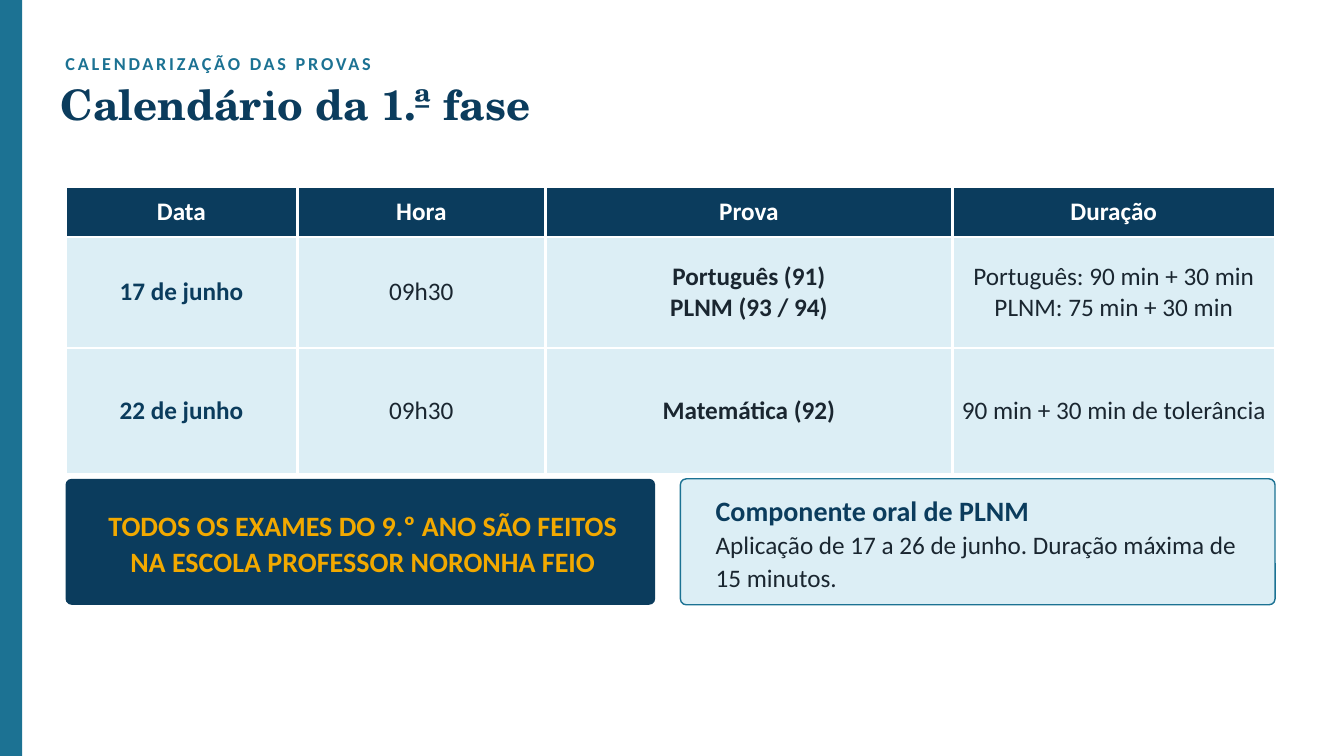
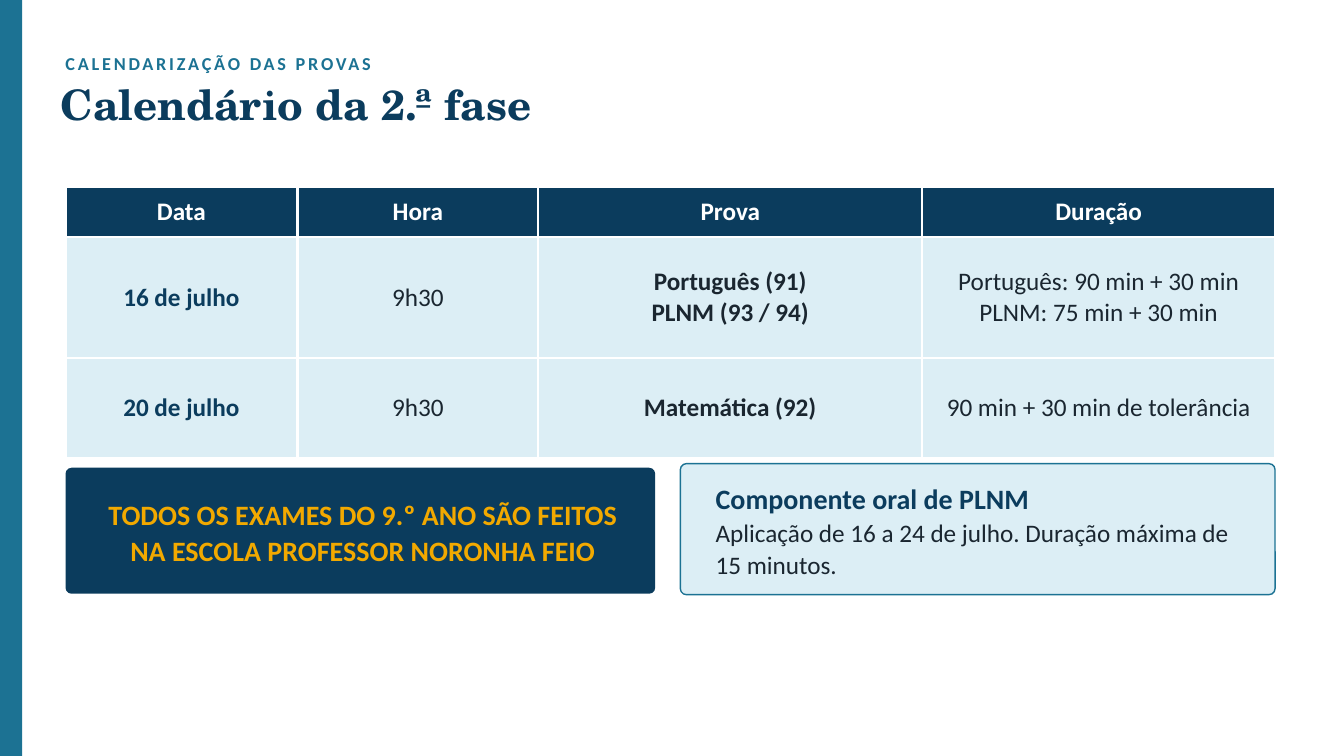
from lxml import etree
from pptx import Presentation
from pptx.dml.color import RGBColor
from pptx.enum import shapes, text
from pptx.oxml.ns import qn
from pptx.util import Pt

NAVY, TEAL, PALE = "0B3C5D", "1C7293", "DCEEF5"
INK, GOLD, WHITE = "1A2630", "F2A900", "FFFFFF"
BODY, SERIF = "Calibri", "TeX Gyre Schola"
LEFT, TABLE_TOP, CORNER = 46.8, 133.2, 4.32
CENTER = text.PP_ALIGN.CENTER
MIDDLE, TOP = text.MSO_ANCHOR.MIDDLE, text.MSO_ANCHOR.TOP

HEADERS = ["Data", "Hora", "Prova", "Duração"]
EXAMS = ["Português (91)\nPLNM (93 / 94)", "Matemática (92)"]
DURATIONS = ["Português: 90 min + 30 min\nPLNM: 75 min + 30 min",
             "90 min + 30 min de tolerância"]
VENUE = "TODOS OS EXAMES DO 9.º ANO SÃO FEITOS NA ESCOLA PROFESSOR NORONHA FEIO"

# Each box is (top, height)
PHASES = [
    {"name": "1.ª", "dates": ["17 de junho", "22 de junho"], "hour": "09h30",
     "oral": "17 a 26 de junho", "columns": [165.6, 177.12, 290.88, 230.4],
     "rows": [36, 79.2, 90], "venue_box": (342, 90), "oral_box": (342, 90)},
    {"name": "2.ª", "dates": ["16 de julho", "20 de julho"], "hour": "9h30",
     "oral": "16 a 24 de julho", "columns": [165.6, 172.08, 274.32, 252],
     "rows": [36, 86.4, 72], "venue_box": (334.08, 90), "oral_box": (331.2, 93.6)},
]


def color(value):
    return RGBColor.from_string(value)


def write(frame, lines, anchor=MIDDLE, align=None, spacing=None, margin=0):
    """Fill a text frame; each line is (text, size, colour, bold, font)."""
    frame.word_wrap = True
    frame.vertical_anchor = anchor
    frame.margin_left = frame.margin_right = Pt(margin)
    frame.margin_top = frame.margin_bottom = Pt(margin)
    for index, (words, size, ink, bold, font) in enumerate(lines):
        paragraph = frame.add_paragraph() if index else frame.paragraphs[0]
        paragraph.alignment = align
        paragraph.line_spacing = spacing
        run = paragraph.add_run()
        run.text = words
        run.font.size, run.font.bold, run.font.name = Pt(size), bold, font
        run.font.color.rgb = color(ink)


presentation = Presentation()
presentation.slide_width, presentation.slide_height = Pt(960), Pt(540)

for phase in PHASES:
    slide = presentation.slides.add_slide(presentation.slide_layouts[6])

    # Side band
    band = slide.shapes.add_shape(shapes.MSO_SHAPE.RECTANGLE, 0, 0, Pt(15.84), Pt(540))
    band.shadow.inherit = False
    band.fill.solid()
    band.fill.fore_color.rgb = color(TEAL)
    band.line.fill.background()

    # Section label and title
    label = slide.shapes.add_textbox(Pt(LEFT), Pt(32.4), Pt(792), Pt(25.2))
    write(label.text_frame, [("CALENDARIZAÇÃO DAS PROVAS", 13, TEAL, True, BODY)])
    label.text_frame.paragraphs[0].runs[0].font._element.set("spc", "200")
    title = slide.shapes.add_textbox(Pt(43.2), Pt(56.16), Pt(871.2), Pt(68.4))
    write(title.text_frame,
          [(f"Calendário da {phase['name']} fase", 30, NAVY, True, SERIF)], TOP)

    # Exam table
    rows = [HEADERS] + [[date, phase["hour"], exam, duration] for date, exam, duration
                        in zip(phase["dates"], EXAMS, DURATIONS)]
    table = slide.shapes.add_table(
        len(rows), len(HEADERS), Pt(LEFT), Pt(TABLE_TOP),
        Pt(sum(phase["columns"])), Pt(sum(phase["rows"]))).table
    table.horz_banding = False
    for column, width in zip(table.columns, phase["columns"]):
        column.width = Pt(width)
    for row, height in zip(table.rows, phase["rows"]):
        row.height = Pt(height)
    for r, values in enumerate(rows):
        for c, value in enumerate(values):
            cell = table.cell(r, c)
            header = r == 0
            ink = WHITE if header else NAVY if c == 0 else INK
            bold = header or c in (0, 2)
            write(cell.text_frame,
                  [(line, 18, ink, bold, BODY) for line in value.split("\n")],
                  align=CENTER)
            cell.vertical_anchor = MIDDLE
            cell.margin_left = cell.margin_right = Pt(5.04)
            cell.margin_top = cell.margin_bottom = Pt(5.04)
            cell.fill.solid()
            cell.fill.fore_color.rgb = color(NAVY if header else PALE)
            properties = cell._tc.get_or_add_tcPr()
            for position, side in enumerate(("a:lnL", "a:lnR", "a:lnT", "a:lnB")):
                border = etree.Element(qn(side), w=str(Pt(2)))
                fill = etree.SubElement(border, qn("a:solidFill"))
                etree.SubElement(fill, qn("a:srgbClr"), val=WHITE)
                properties.insert(position, border)

    # Venue and oral exam boxes
    venue = [(VENUE, 20, GOLD, True, BODY)]
    oral = [("Componente oral de PLNM", 20, NAVY, True, BODY),
            (f"Aplicação de {phase['oral']}. Duração máxima de 15 minutos.",
             18, INK, False, BODY)]
    for left, width, (top, height), fill, outline, lines, align in (
            (LEFT, 421.2, phase["venue_box"], NAVY, None, venue, CENTER),
            (486, 424.8, phase["oral_box"], PALE, TEAL, oral, None)):
        box = slide.shapes.add_shape(shapes.MSO_SHAPE.ROUNDED_RECTANGLE,
                                     Pt(left), Pt(top), Pt(width), Pt(height))
        box.adjustments[0] = CORNER / height
        box.shadow.inherit = False
        box.fill.solid()
        box.fill.fore_color.rgb = color(fill)
        if outline:
            box.line.color.rgb = color(outline)
            box.line.width = Pt(1)
        else:
            box.line.fill.background()
        note = slide.shapes.add_textbox(Pt(left + 25.2), Pt(top + 7.2),
                                        Pt(374.4), Pt(height - 14.4))
        write(note.text_frame, lines, align=align, spacing=1.08)

presentation.save("out.pptx")
